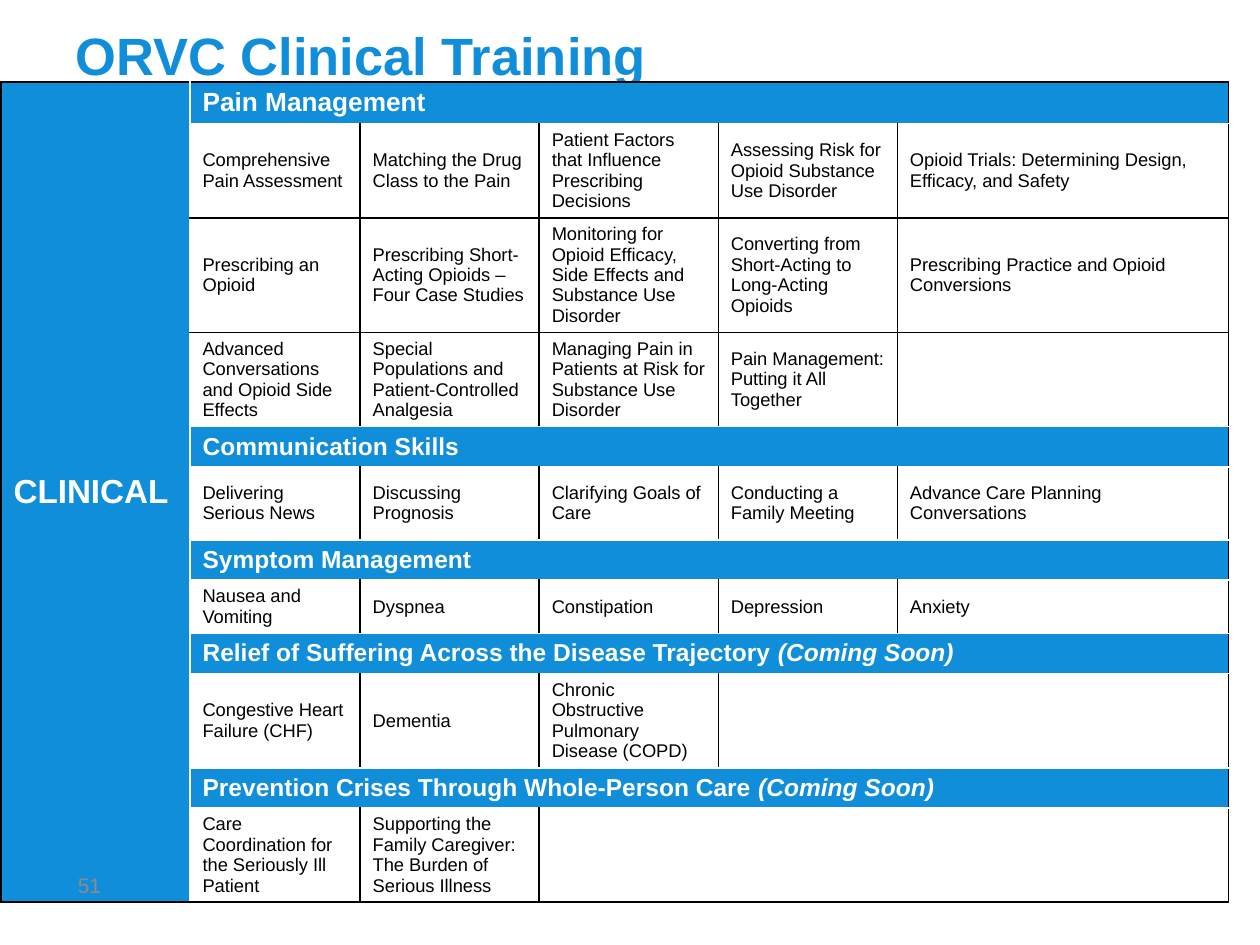
from lxml.etree import SubElement as Sub
from pptx import Presentation
from pptx.dml.color import RGBColor as RGB
from pptx.enum.text import MSO_ANCHOR as Anchor, PP_ALIGN as Align
from pptx.oxml.ns import qn
from pptx.util import Cm, Pt

BLUE = RGB(0x11, 0x8E, 0xD9)
WHITE = RGB(0xFF, 0xFF, 0xFF)
BLACK = RGB(0, 0, 0)
GRAY = RGB(0x8C, 0x8C, 0x8C)

SOON = "(Coming Soon)"
WIDTHS = [3.81, 3.43, 3.61, 3.61, 3.61, 6.68]
LAST = len(WIDTHS) - 1
BAND = 0.79

# Each section: heading, note, and rows of (height, courses)
SECTIONS = [
    ("Pain Management", "", [
        (1.88, ["Comprehensive Pain Assessment",
                "Matching the Drug Class to the Pain",
                "Patient Factors that Influence Prescribing Decisions",
                "Assessing Risk for Opioid Substance Use Disorder",
                "Opioid Trials: Determining Design, Efficacy, and Safety"]),
        (2.29, ["Prescribing an Opioid",
                "Prescribing Short-Acting Opioids – Four Case Studies",
                "Monitoring for Opioid Efficacy, Side Effects and Substance Use Disorder",
                "Converting from Short-Acting to Long-Acting Opioids",
                "Prescribing Practice and Opioid Conversions"]),
        (1.88, ["Advanced Conversations and Opioid Side Effects",
                "Special Populations and Patient-Controlled Analgesia",
                "Managing Pain in Patients at Risk for Substance Use Disorder",
                "Pain Management: Putting it All Together"]),
    ]),
    ("Communication Skills", "", [
        (1.47, ["Delivering Serious News", "Discussing Prognosis",
                "Clarifying Goals of Care", "Conducting a Family Meeting",
                "Advance Care Planning Conversations"]),
    ]),
    ("Symptom Management", "", [
        (1.04, ["Nausea and Vomiting", "Dyspnea", "Constipation",
                "Depression", "Anxiety"]),
    ]),
    ("Relief of Suffering Across the Disease Trajectory ", SOON, [
        (1.88, ["Congestive Heart Failure (CHF)", "Dementia",
                "Chronic Obstructive Pulmonary Disease (COPD)"]),
    ]),
    ("Prevention Crises Through Whole-Person Care ", SOON, [
        (1.88, ["Care Coordination for the Seriously Ill Patient",
                "Supporting the Family Caregiver: The Burden of Serious Illness"]),
    ]),
]


class Deck:
    font = "Arial"

    def __init__(self):
        self.prs = Presentation()
        self.prs.slide_width, self.prs.slide_height = Cm(25.4), Cm(19.05)
        self.slide = self.prs.slides.add_slide(self.prs.slide_layouts[5])

    def run(self, para, text, size, color, bold=False, slant=False):
        run = para.add_run()
        run.text = text
        font = run.font
        font.name, font.size = self.font, Pt(size)
        font.bold, font.italic = bold, slant
        font.color.rgb = color

    def place(self, shape, left, top, width, height):
        shape.left, shape.top = Cm(left), Cm(top)
        shape.width, shape.height = Cm(width), Cm(height)

    def title(self, text, *box):
        shape = self.slide.shapes.title
        self.place(shape, *box)
        shape.text_frame.vertical_anchor = Anchor.MIDDLE
        para = shape.text_frame.paragraphs[0]
        para.alignment = Align.LEFT
        self.run(para, text, 30, BLUE, bold=True)

    def label(self, text, *box):
        shape = self.slide.shapes.add_textbox(*map(Cm, box))
        frame = shape.text_frame
        frame.word_wrap = True
        frame.vertical_anchor = Anchor.MIDDLE
        self.run(frame.paragraphs[0], text, 12, GRAY)

    def grid(self, heights, left, top):
        shape = self.slide.shapes.add_table(
            len(heights), len(WIDTHS), Cm(left), Cm(top),
            Cm(sum(WIDTHS)), Cm(sum(heights)))
        table = shape.table
        table.first_row = table.horz_banding = False
        for col, width in zip(table.columns, WIDTHS):
            col.width = Cm(width)
        for row, height in zip(table.rows, heights):
            row.height = Cm(height)
        return table

    def cell(self, cell, edges, fill=None):
        """Set edge colours (left, right, top, bottom) and fill; give the paragraph."""
        props = cell._tc.get_or_add_tcPr()
        for side, color in zip("LRTB", edges):
            line = Sub(props, qn(f"a:ln{side}"), w=str(Pt(1)))
            solid = Sub(line, qn("a:solidFill"))
            Sub(solid, qn("a:srgbClr"), val=str(color))
        if fill is None:
            cell.fill.background()
        else:
            cell.fill.solid()
            cell.fill.fore_color.rgb = fill
        cell.vertical_anchor = Anchor.MIDDLE
        return cell.text_frame.paragraphs[0]

    def band(self, table, row, text, note):
        first = table.cell(row, 1)
        first.merge(table.cell(row, LAST))
        top, size = (WHITE, 14) if row else (BLACK, 15)
        para = self.cell(first, (WHITE, BLACK, top, WHITE), BLUE)
        self.run(para, text, size, WHITE, bold=True)
        if note:
            self.run(para, note, size, WHITE, bold=True, slant=True)

    def courses(self, table, row, names, top, low):
        for col in range(1, LAST + 1):
            cell = table.cell(row, col)
            used = col <= len(names)
            left = BLACK if 1 < col <= len(names) + 1 else WHITE
            right = BLACK if used or col == LAST or cell.is_merge_origin else WHITE
            para = self.cell(cell, (left, right, top, low))
            if used:
                self.run(para, names[col - 1], 10.5, BLACK)


def main():
    deck = Deck()
    deck.title("ORVC Clinical Training", 1.27, 0.2, 22.86, 1.78)

    heights = []
    for _, _, rows in SECTIONS:
        heights += [BAND] + [height for height, _ in rows]
    heights[0] = 0.61
    table = deck.grid(heights, 0.02, 1.65)
    end = len(heights) - 1

    side = table.cell(0, 0)
    side.merge(table.cell(end, 0))
    para = deck.cell(side, (BLACK, WHITE, BLACK, BLACK), BLUE)
    deck.run(para, "CLINICAL", 19, WHITE, bold=True)
    table.cell(end, 3).merge(table.cell(end, LAST))

    row = 0
    for head, note, rows in SECTIONS:
        deck.band(table, row, head, note)
        for num, (_, names) in enumerate(rows, 1):
            row += 1
            top = BLACK if num > 1 else WHITE
            low = BLACK if num < len(rows) or row == end else WHITE
            deck.courses(table, row, names, top, low)
        row += 1

    deck.label("51", 1.32, 17.3, 1.32, 1.07)
    deck.prs.save("out.pptx")


if __name__ == "__main__":
    main()
